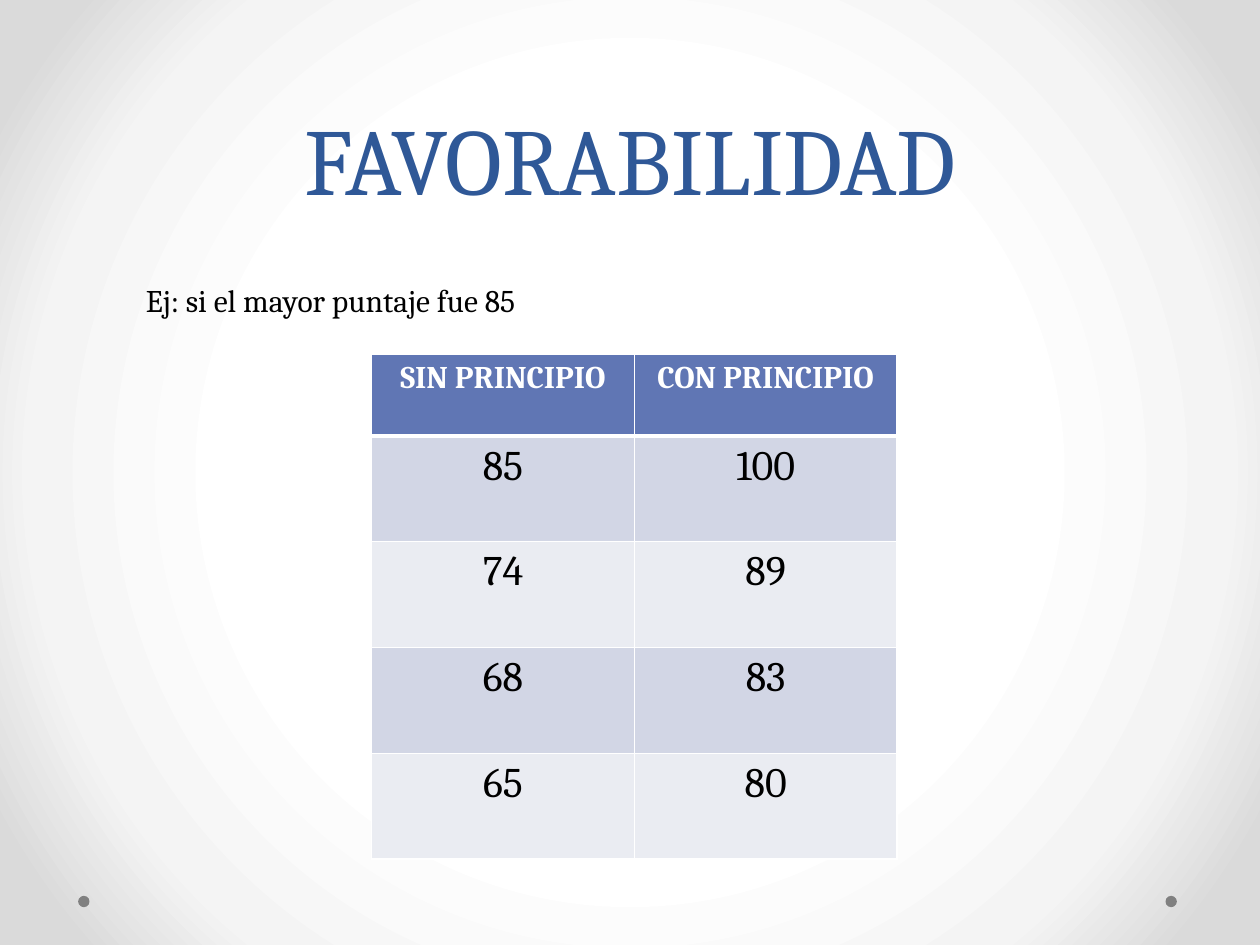
from dataclasses import dataclass

import lxml.etree
import pptx
import pptx.dml.color
import pptx.enum.shapes
import pptx.enum.text
import pptx.oxml
import pptx.oxml.ns
import pptx.util

Inches, Pt = pptx.util.Inches, pptx.util.Pt
ALIGN = pptx.enum.text.PP_ALIGN
ANCHOR = pptx.enum.text.MSO_ANCHOR
FONT = "Cambria"
WHITE, BLACK, BLUE, GREY = "FFFFFF", "000000", "2F5897", "808080"
HEAD, BANDS = "6076B4", ("D2D6E5", "EAECF2")


@dataclass
class Box:
    x: float
    y: float
    w: float
    h: float

    def emu(self) -> tuple:
        return tuple(Inches(v) for v in (self.x, self.y, self.w, self.h))


@dataclass
class Row:
    cells: tuple
    high: float
    fill: str
    ink: str = BLACK
    size: int = 24
    bold: bool = False
    rule: int = 1


def rgb(code: str) -> pptx.dml.color.RGBColor:
    return pptx.dml.color.RGBColor.from_string(code)


def write(frame, text: str, *, size=18, color=BLACK, bold=False,
          align=ALIGN.LEFT, lead=None) -> None:
    par = frame.paragraphs[0]
    par.alignment = align
    if lead:
        par.line_spacing = Pt(lead)
    run = par.add_run()
    run.text = text
    font = run.font
    font.name, font.size, font.bold = FONT, Pt(size), bold
    font.color.rgb = rgb(color)


def glow(slide, stops: tuple) -> None:
    """Fill the background with a round gradient from the centre."""
    marks = "".join(f'<a:gs pos="{pos * 1000}"><a:srgbClr val="{code}"/></a:gs>'
                    for pos, code in stops)
    back = pptx.oxml.parse_xml(
        f'<p:bg {pptx.oxml.ns.nsdecls("p", "a")}><p:bgPr><a:gradFill rotWithShape="1">'
        f'<a:gsLst>{marks}</a:gsLst><a:path path="circle">'
        '<a:fillToRect l="50000" t="50000" r="50000" b="50000"/></a:path>'
        '</a:gradFill><a:effectLst/></p:bgPr></p:bg>')
    slide.element.cSld.insert(0, back)


def dot(slide, x: float) -> None:
    ball = slide.shapes.add_shape(pptx.enum.shapes.MSO_SHAPE.OVAL,
                                  *Box(x, 7.11, 0.09, 0.09).emu())
    ball.shadow.inherit = False
    ball.fill.solid()
    ball.fill.fore_color.rgb = rgb(GREY)
    ball.line.fill.background()


def edge(cell, sides: dict) -> None:
    """Draw white cell borders; they must come before the fill."""
    props = cell._tc.get_or_add_tcPr()
    for i, (side, wide) in enumerate(sides.items()):
        props.insert(i, pptx.oxml.parse_xml(
            f'<a:{side} {pptx.oxml.ns.nsdecls("a")} w="{Pt(wide)}"><a:solidFill>'
            f'<a:srgbClr val="{WHITE}"/></a:solidFill></a:{side}>'))


def grid(slide, box: Box, rows: list[Row]) -> None:
    cols = len(rows[0].cells)
    table = slide.shapes.add_table(len(rows), cols, *box.emu()).table
    for col in table.columns:
        col.width = Inches(box.w / cols)
    above = 1
    for r, row in enumerate(rows):
        table.rows[r].height = Inches(row.high)
        for c, text in enumerate(row.cells):
            cell = table.cell(r, c)
            cell.fill.solid()
            cell.fill.fore_color.rgb = rgb(row.fill)
            edge(cell, {"lnL": 1, "lnR": 1, "lnT": above, "lnB": row.rule})
            write(cell.text_frame, text, size=row.size, color=row.ink,
                  bold=row.bold, align=ALIGN.CENTER)
        above = row.rule


def main() -> None:
    deck = pptx.Presentation()
    deck.slide_width, deck.slide_height = Inches(10), Inches(7.5)
    slide = deck.slides.add_slide(deck.slide_layouts[5])

    # Background and corner dots
    glow(slide, ((50, WHITE), (76, "F4F4F4"), (92, "DADADA")))
    for x in (9.25, 0.62):
        dot(slide, x)

    # Title
    title = slide.shapes.title
    title.left, title.top, title.width, title.height = Box(0.5, 0, 9, 1.75).emu()
    title.text_frame.auto_size = pptx.enum.text.MSO_AUTO_SIZE.NONE
    title.text_frame.vertical_anchor = ANCHOR.BOTTOM
    write(title.text_frame, "FAVORABILIDAD", size=54, color=BLUE,
          align=ALIGN.CENTER, lead=58)

    # Score table
    scores = ((85, 100), (74, 89), (68, 83), (65, 80))
    rows = [Row(("SIN PRINCIPIO", "CON PRINCIPIO"), 0.65, HEAD, WHITE, 18, True, 3)]
    rows += [Row(tuple(map(str, pair)), 0.84, BANDS[i % 2])
             for i, pair in enumerate(scores)]
    grid(slide, Box(2.95, 2.81, 4.17, 4.01), rows)

    # Example line
    note = slide.shapes.add_textbox(*Box(1.06, 2.18, 6.46, 0.4).emu())
    note.text_frame.word_wrap = True
    write(note.text_frame, "Ej: si el mayor puntaje fue 85")

    deck.save("out.pptx")


if __name__ == "__main__":
    main()
